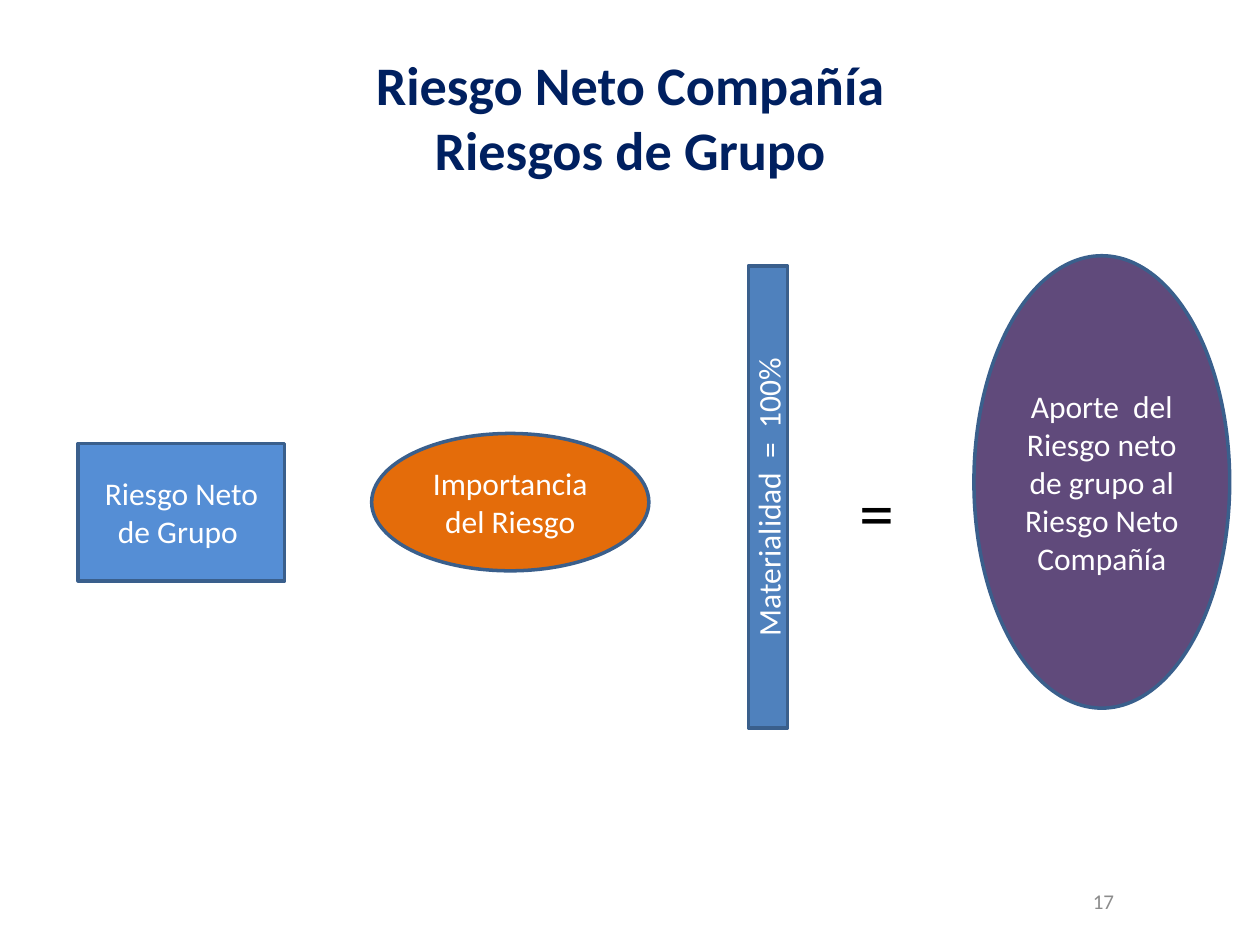
from pptx import Presentation
from pptx.dml.color import RGBColor
from pptx.enum.shapes import MSO_SHAPE
from pptx.enum.text import MSO_ANCHOR, PP_ALIGN
from pptx.util import Inches, Pt

RECT, OVAL = MSO_SHAPE.RECTANGLE, MSO_SHAPE.OVAL
LEFT, MID, RIGHT = PP_ALIGN.LEFT, PP_ALIGN.CENTER, PP_ALIGN.RIGHT
TOP, CENTER = MSO_ANCHOR.TOP, MSO_ANCHOR.MIDDLE

THEME = {
    "font": "Calibri",
    "edge": "3A5F8C",
    "edge_width": 2,
    # role: (size, colour, bold)
    "title": (31, "002060", True),
    "label": (18, "FFFFFF", False),
    "sign": (40, "000000", False),
    "number": (12, "8C8C8C", False),
}

# lines, role, box, alignment, anchor, wrap
TEXTS = [
    (["Riesgo Neto Compañía", "Riesgos de Grupo"], "title",
     (0.5, 0.3, 9, 1.25), MID, CENTER, True),
    (["17"], "number", (7.17, 6.95, 1.77, 0.4), RIGHT, CENTER, True),
    (["="], "sign", (6.72, 3.67, 0.48, 0.77), LEFT, TOP, False),
]

# text, outline, fill, box, text direction
FACTORS = [
    ("Riesgo Neto de Grupo ", RECT, "558ED5", (0.62, 3.52, 1.64, 1.09), "horz"),
    ("Importancia del Riesgo", OVAL, "E46C0A", (2.95, 3.44, 2.2, 1.09), "horz"),
    ("Materialidad  =  100%", RECT, "4F81BD", (5.94, 2.11, 0.31, 3.67), "vert270"),
    ("Aporte  del Riesgo neto de grupo al Riesgo Neto Compañía", OVAL,
     "604A7B", (7.73, 2.03, 2.03, 3.59), "horz"),
]


def color(code):
    return RGBColor.from_string(code)


def write(frame, lines, role, align, anchor, wrap=True):
    """Fill a frame with one paragraph, its lines parted by line breaks."""
    size, ink, bold = THEME[role]
    frame.word_wrap = wrap
    frame.vertical_anchor = anchor
    para = frame.paragraphs[0]
    para.alignment = align
    for i, line in enumerate(lines):
        if i:
            para.add_line_break()
        run = para.add_run()
        run.text = line
        run.font.name = THEME["font"]
        run.font.size = Pt(size)
        run.font.bold = bold
        run.font.color.rgb = color(ink)


def add_text(slide, lines, role, box, align, anchor, wrap):
    area = slide.shapes.add_textbox(*map(Inches, box))
    write(area.text_frame, lines, role, align, anchor, wrap)


def add_factor(slide, text, outline, fill, box, turn):
    shape = slide.shapes.add_shape(outline, *map(Inches, box))
    shape.shadow.inherit = False
    shape.fill.solid()
    shape.fill.fore_color.rgb = color(fill)
    shape.line.color.rgb = color(THEME["edge"])
    shape.line.width = Pt(THEME["edge_width"])
    shape.element.txBody.bodyPr.set("vert", turn)
    write(shape.text_frame, [text], "label", MID, CENTER)


def main():
    deck = Presentation()
    deck.slide_width, deck.slide_height = Inches(10), Inches(7.5)
    slide = deck.slides.add_slide(deck.slide_layouts[6])
    for item in TEXTS:
        add_text(slide, *item)
    for item in FACTORS:
        add_factor(slide, *item)
    deck.save("out.pptx")


if __name__ == "__main__":
    main()
